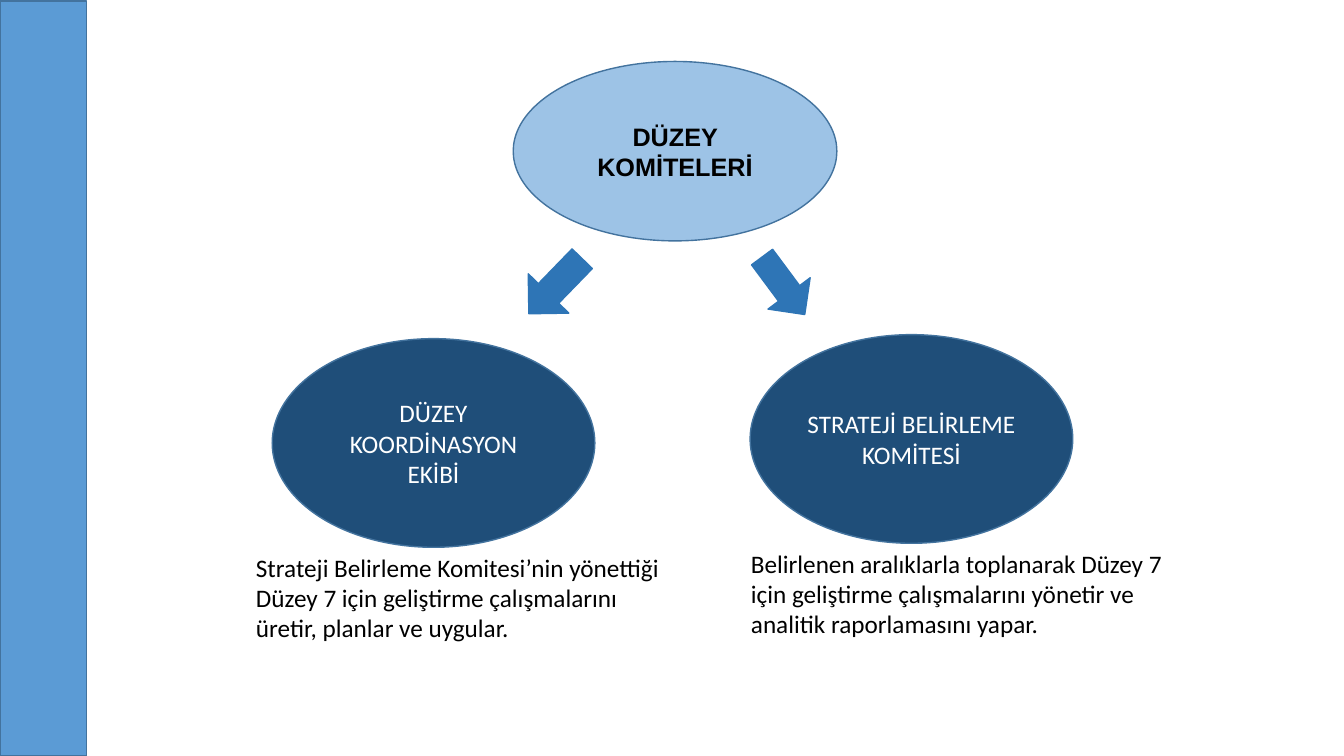
from pptx import Presentation
from pptx.dml.color import RGBColor
from pptx.enum.shapes import MSO_SHAPE
from pptx.enum.text import MSO_ANCHOR, MSO_AUTO_SIZE, PP_ALIGN
from pptx.util import Inches, Pt

EDGE = "43739E"
NAVY = "1F4E79"
BLUE = "2E75B6"


def color(code):
    return RGBColor.from_string(code)


def shape(slide, kind, box, fill, line=EDGE, turn=0):
    item = slide.shapes.add_shape(kind, *map(Inches, box))
    item.shadow.inherit = False
    item.fill.solid()
    item.fill.fore_color.rgb = color(fill)
    item.line.color.rgb = color(line)
    item.line.width = Pt(1)
    item.rotation = turn
    return item


def write(frame, text, ink, font="Calibri", bold=False, align=PP_ALIGN.LEFT):
    frame.word_wrap = True
    para = frame.paragraphs[0]
    para.alignment = align
    run = para.add_run()
    run.text = text
    run.font.name = font
    run.font.size = Pt(18)
    run.font.bold = bold
    run.font.color.rgb = color(ink)


def oval(slide, box, text, fill, ink, font="Calibri", bold=False):
    frame = shape(slide, MSO_SHAPE.OVAL, box, fill).text_frame
    frame.vertical_anchor = MSO_ANCHOR.MIDDLE
    write(frame, text, ink, font, bold, PP_ALIGN.CENTER)


def arrow(slide, box, turn):
    shape(slide, MSO_SHAPE.DOWN_ARROW, box, BLUE, BLUE, turn)


def branch(slide, box, name, duty, shift, width):
    left, top, wide, high = box
    oval(slide, box, name, NAVY, "FFFFFF")
    area = (left + shift, top + high, width, 1.01)
    frame = slide.shapes.add_textbox(*map(Inches, area)).text_frame
    write(frame, duty, "000000")
    frame.auto_size = MSO_AUTO_SIZE.SHAPE_TO_FIT_TEXT


def main():
    deck = Presentation()
    deck.slide_width = Inches(13.33)
    deck.slide_height = Inches(7.5)
    slide = deck.slides.add_slide(deck.slide_layouts[6])

    shape(slide, MSO_SHAPE.RECTANGLE, (0, 0.01, 0.86, 7.49), "5B9BD5")
    oval(slide, (5.09, 0.61, 3.21, 1.78), "DÜZEY KOMİTELERİ",
         "9DC3E6", "000000", "Arial", True)
    arrow(slide, (5.23, 2.46, 0.56, 0.76), 44.1)
    arrow(slide, (7.51, 2.48, 0.52, 0.71), 323.4)
    branch(slide, (2.7, 3.36, 3.2, 2.07), "DÜZEY KOORDİNASYON EKİBİ",
           "Strateji Belirleme Komitesi’nin yönettiği Düzey 7 için "
           "geliştirme çalışmalarını üretir, planlar ve uygular.",
           -0.26, 4.25)
    branch(slide, (7.44, 3.32, 3.2, 2.07), "STRATEJİ BELİRLEME KOMİTESİ",
           "Belirlenen aralıklarla toplanarak Düzey 7 için geliştirme "
           "çalışmalarını yönetir ve analitik raporlamasını yapar.",
           -0.09, 4.66)
    deck.save("out.pptx")


if __name__ == "__main__":
    main()
